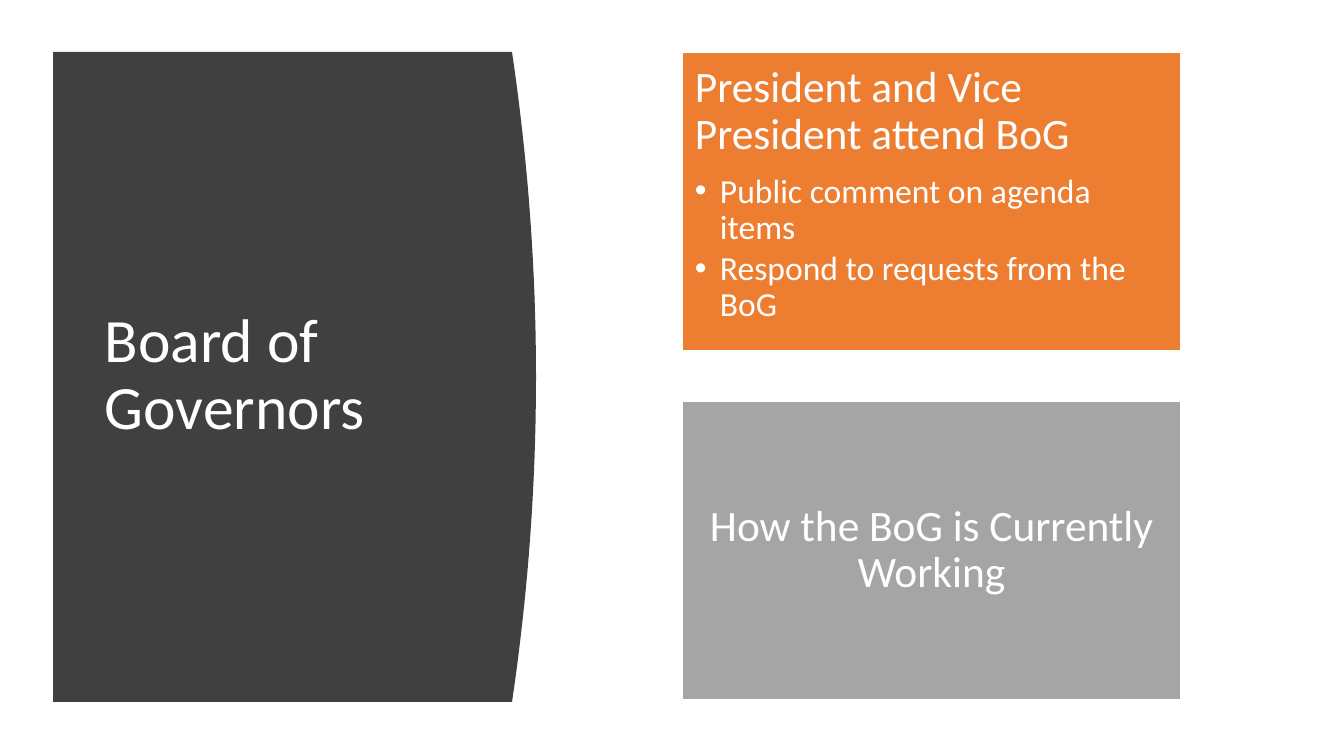
from lxml import etree
from pptx import Presentation
from pptx.dml.color import RGBColor
from pptx.enum.shapes import MSO_SHAPE as Preset
from pptx.enum.text import MSO_ANCHOR as Anchor, PP_ALIGN as Align
from pptx.oxml.ns import qn
from pptx.util import Pt

EMU_PER_PX = 914400 / 100.8
WHITE = RGBColor(0xFF, 0xFF, 0xFF)
CHARCOAL = RGBColor(0x40, 0x40, 0x40)
ORANGE = RGBColor(0xED, 0x7D, 0x31)
GRAY = RGBColor(0xA5, 0xA5, 0xA5)

CARD_LEFT, CARD_TOP, CARD_WIDTH, CARD_HEIGHT = 682, 52, 499, 299
CARD_PITCH = 349
CARD_INSET = 13
BULLET_INDENT = 25
CURVE_STEPS = 40

HEADING = {"size": 31, "space_after": 10.85}
BULLET = {"size": 24, "space_after": 3.6, "bullet": True}


def px(length):
    return round(length * EMU_PER_PX)


def set_attributes(target, values):
    for name, value in values.items():
        setattr(target, name, value)


def add_bullet(paragraph):
    properties = paragraph._p.get_or_add_pPr()
    properties.set("marL", str(px(BULLET_INDENT)))
    properties.set("indent", str(-px(BULLET_INDENT)))
    etree.SubElement(properties, qn("a:buFont")).set("typeface", "Arial")
    etree.SubElement(properties, qn("a:buChar")).set("char", "•")


def write_paragraph(paragraph, text, size, space_after=0, bullet=False, align=Align.LEFT):
    set_attributes(paragraph, {
        "text": text,
        "alignment": align,
        "line_spacing": 0.9,
        "space_before": Pt(0),
        "space_after": Pt(space_after),
    })
    if bullet:
        add_bullet(paragraph)
    for run in paragraph.runs:
        set_attributes(run.font, {"name": "Calibri", "size": Pt(size)})
        run.font.color.rgb = WHITE


def paint(shape, color):
    shape.shadow.inherit = False
    shape.fill.solid()
    shape.fill.fore_color.rgb = color


def add_curved_panel(slide, left, top, right, bottom, bulge):
    middle, half = (top + bottom) / 2, (bottom - top) / 2
    edge = []
    for step in range(CURVE_STEPS + 1):
        offset = 2 * step / CURVE_STEPS - 1
        edge.append((px(right + bulge * (1 - offset ** 2)), px(middle + half * offset)))
    outline = slide.shapes.build_freeform(px(left), px(top), scale=1.0)
    outline.add_line_segments(edge + [(px(left), px(bottom))], close=True)
    panel = outline.convert_to_shape()
    paint(panel, CHARCOAL)
    panel.line.fill.background()


def add_title(slide, left, top, width, height, text):
    title = slide.shapes.add_textbox(px(left), px(top), px(width), px(height))
    set_attributes(title.text_frame, {"word_wrap": True, "vertical_anchor": Anchor.MIDDLE})
    write_paragraph(title.text_frame.paragraphs[0], text, size=44)


def add_card(slide, row, color, anchor, content):
    card = slide.shapes.add_shape(
        Preset.RECTANGLE, px(CARD_LEFT), px(CARD_TOP + row * CARD_PITCH),
        px(CARD_WIDTH), px(CARD_HEIGHT))
    paint(card, color)
    card.line.color.rgb = WHITE
    card.line.width = Pt(1)
    frame = card.text_frame
    set_attributes(frame, {"word_wrap": True, "vertical_anchor": anchor})
    set_attributes(frame, {
        f"margin_{side}": px(CARD_INSET) for side in ("left", "top", "right", "bottom")})
    for index, (text, style) in enumerate(content):
        paragraph = frame.add_paragraph() if index else frame.paragraphs[0]
        write_paragraph(paragraph, text, **style)


def main():
    deck = Presentation()
    set_attributes(deck, {"slide_width": px(1344), "slide_height": px(756)})
    slide = deck.slides.add_slide(deck.slide_layouts[6])
    add_curved_panel(slide, left=53, top=52, right=512, bottom=702, bulge=24)
    add_title(slide, 95, 112, 377, 528, "Board of Governors")
    add_card(slide, 0, ORANGE, Anchor.TOP, [
        ("President and Vice President attend BoG", HEADING),
        ("Public comment on agenda items", BULLET),
        ("Respond to requests from the BoG", BULLET),
    ])
    add_card(slide, 1, GRAY, Anchor.MIDDLE, [
        ("How the BoG is Currently Working", {**HEADING, "align": Align.CENTER}),
    ])
    deck.save("out.pptx")


if __name__ == "__main__":
    main()
